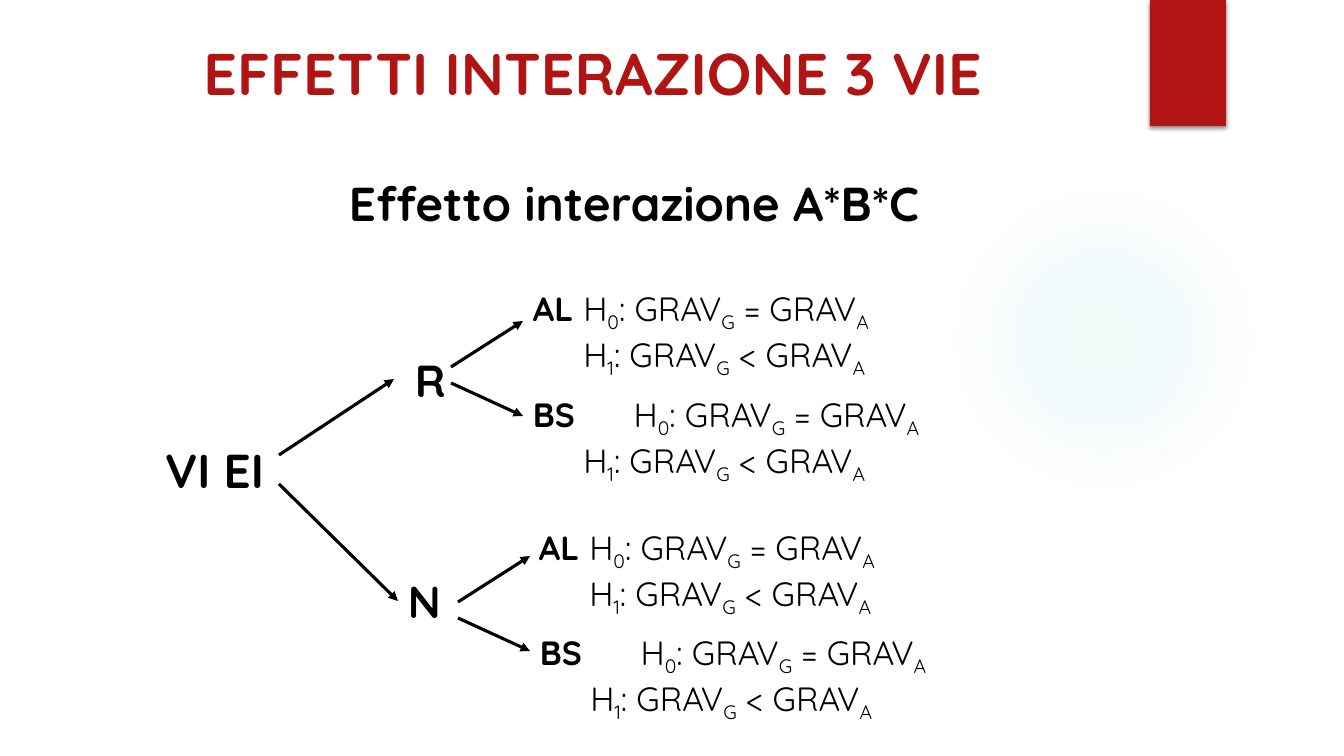
from lxml import etree
from pptx import Presentation
from pptx.dml.color import RGBColor
from pptx.enum.shapes import MSO_CONNECTOR, MSO_SHAPE
from pptx.enum.text import MSO_ANCHOR, MSO_AUTO_SIZE, PP_ALIGN
from pptx.oxml import parse_xml
from pptx.oxml.ns import nsdecls, qn
from pptx.util import Emu, Pt

PX = 914400 / 100.8
FONT = "Quicksand"
RED, BLACK, TEAL = "B01513", "000000", "50B9C1"
TOP, MIDDLE = MSO_ANCHOR.TOP, MSO_ANCHOR.MIDDLE
LEFT, CENTER = PP_ALIGN.LEFT, PP_ALIGN.CENTER
STRAIGHT = MSO_CONNECTOR.STRAIGHT
TAB_STOP = 457200


def px(*lengths):
    return [Emu(round(length * PX)) for length in lengths]


def style(run, size, color, bold=True):
    run.font.name = FONT
    run.font.size = Pt(size)
    run.font.bold = bold
    run.font.color.rgb = RGBColor.from_string(color)


prs = Presentation()
prs.slide_width, prs.slide_height = px(1344, 756)
slide = prs.slides.add_slide(prs.slide_layouts[5])
shapes = slide.shapes
title = shapes.title

glow = shapes.add_shape(MSO_SHAPE.OVAL, *px(949, 184, 310, 310))
ribbon = shapes.add_shape(MSO_SHAPE.RECTANGLE, *px(1150, 0, 76, 126))
for decoration in (glow, ribbon):
    decoration.shadow.inherit = False
    decoration.line.fill.background()

stops = "".join(
    f'<a:gs pos="{position * 1000}"><a:srgbClr val="{TEAL}">'
    f'<a:alpha val="{opacity * 1000}"/></a:srgbClr></a:gs>'
    for position, opacity in ((0, 7), (36, 6), (69, 0))
)
glow.element.spPr.insert(2, parse_xml(
    f'<a:gradFill {nsdecls("a")} rotWithShape="1"><a:gsLst>{stops}</a:gsLst>'
    '<a:path path="circle"><a:fillToRect l="50000" t="50000" r="50000" b="50000"/>'
    '</a:path></a:gradFill>'
))

ribbon.fill.solid()
ribbon.fill.fore_color.rgb = RGBColor.from_string(RED)
ribbon.element.spPr.find(qn("a:effectLst")).append(parse_xml(
    f'<a:outerShdw {nsdecls("a")} blurRad="38100" dist="25400" dir="5400000" rotWithShape="0">'
    f'<a:srgbClr val="{BLACK}"><a:alpha val="45000"/></a:srgbClr></a:outerShdw>'
))

title.left, title.top, title.width, title.height = px(74, 32, 1037, 154)
labels = [
    (title, "EFFETTI INTERAZIONE 3 VIE", 42, RED, CENTER, TOP),
]
for wording, box, size, align, anchor in (
    ("Effetto interazione A*B*C", (339, 169, 604, 91), 34, LEFT, TOP),
    ("VI EI", (150, 436, 129, 91), 34, CENTER, TOP),
    ("R", (405, 351, 109, 58), 32, LEFT, MIDDLE),
    ("N", (398, 561, 80, 79), 32, LEFT, MIDDLE),
):
    labels.append((shapes.add_textbox(*px(*box)), wording, size, BLACK, align, anchor))

for label, wording, size, color, align, anchor in labels:
    frame = label.text_frame
    frame.text = wording
    frame.word_wrap = True
    frame.auto_size = MSO_AUTO_SIZE.NONE
    frame.vertical_anchor = anchor
    frame.paragraphs[0].alignment = align
    style(frame.paragraphs[0].runs[0], size, color)

arrows = [(279, 455, 394, 379), (279, 484, 398, 601)]
for branch_x, branch_y in ((451, 367), (458, 602)):
    arrows.append((branch_x, branch_y, branch_x + 72, branch_y - 46))
    arrows.append((branch_x, branch_y + 16, branch_x + 72, branch_y + 49))

for ends in arrows:
    arrow = shapes.add_connector(STRAIGHT, *px(*ends))
    arrow.line.color.rgb = RGBColor.from_string(BLACK)
    arrow.line.width = Pt(2.25)
    properties = arrow.element.spPr
    etree.SubElement(properties.find(qn("a:ln")), qn("a:tailEnd"), type="triangle")
    etree.SubElement(properties, qn("a:effectLst"))

for group, left, top in (("AL", 523, 288), ("BS", 523, 394), ("AL", 529, 527), ("BS", 530, 632)):
    frame = shapes.add_textbox(*px(left, top, 471, 91)).text_frame
    frame.word_wrap = True
    frame.vertical_anchor = MIDDLE
    for lead, index, sign in ((f"{group} \t", "0", "="), ("\t", "1", "<")):
        hypothesis = frame.paragraphs[0] if index == "0" else frame.add_paragraph()
        hypothesis.alignment = LEFT
        tabs = etree.SubElement(hypothesis._p.get_or_add_pPr(), qn("a:tabLst"))
        for step in (1, 2):
            etree.SubElement(tabs, qn("a:tab"), pos=str(step * TAB_STOP), algn="l")
        pieces = (lead, "H", index, ": GRAV", "G", f" {sign} GRAV", "A")
        for place, piece in enumerate(pieces):
            run = hypothesis.add_run()
            run.text = piece
            style(run, 24, BLACK, bold=place == 0)
            if place in (2, 4, 6):
                run.font._element.set("baseline", "-25000")

prs.save("out.pptx")
